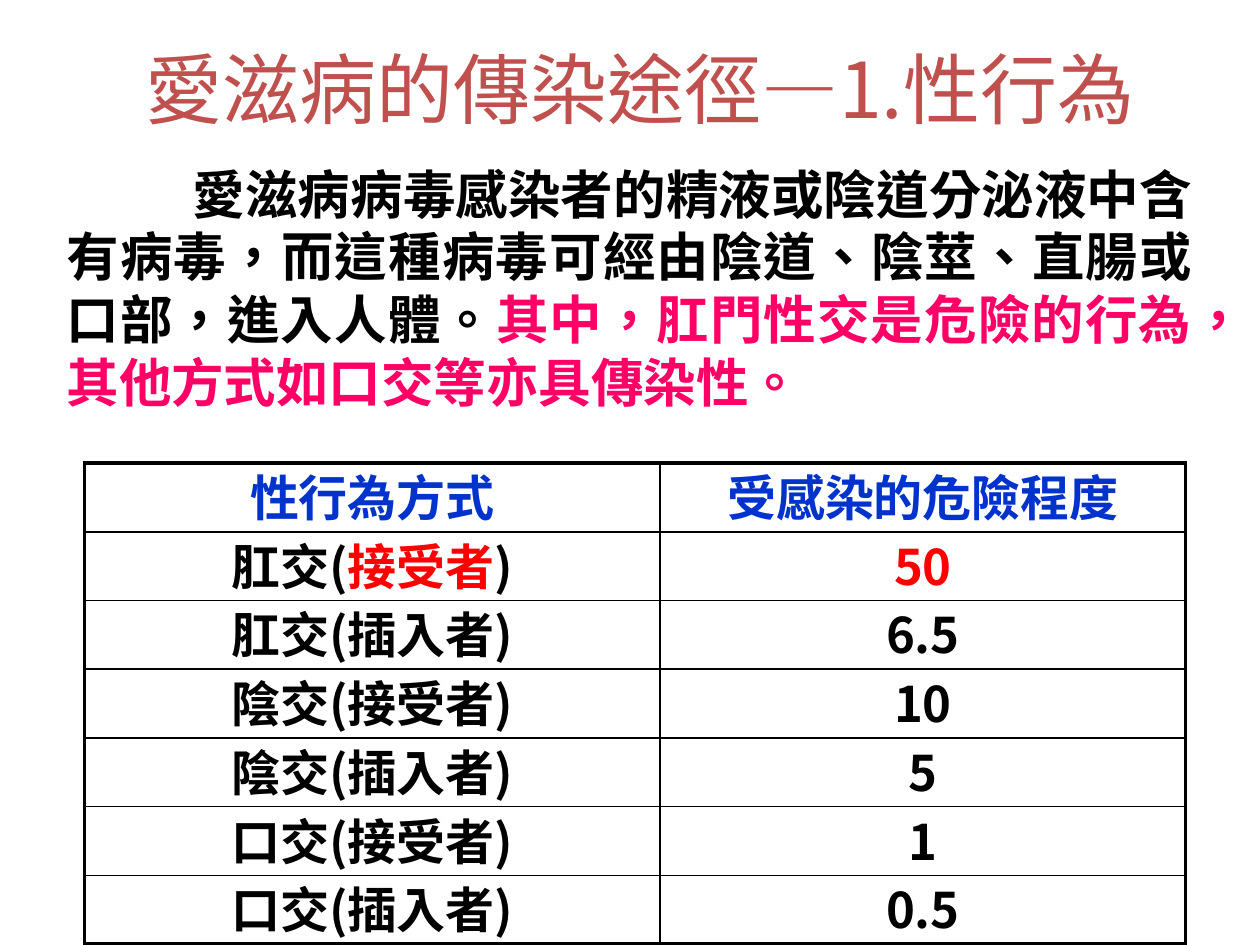
from dataclasses import dataclass

from lxml import etree
from pptx import Presentation
from pptx.dml.color import RGBColor
from pptx.enum.text import MSO_ANCHOR, MSO_AUTO_SIZE, PP_ALIGN
from pptx.oxml.ns import qn
from pptx.util import Inches, Pt

MIDDLE, TOP = MSO_ANCHOR.MIDDLE, MSO_ANCHOR.TOP
CENTER, JUSTIFY = PP_ALIGN.CENTER, PP_ALIGN.JUSTIFY
NO_FIT = MSO_AUTO_SIZE.NONE

WIDTH, HEIGHT = Inches(10), Inches(7.5)
COLORS = {
    "title": "C0504D",
    "text": "000000",
    "warning": "FF0066",
    "header": "0033CC",
    "highest": "FF0000",
}
CJK_FONT = "Noto Sans CJK SC"
TITLE_ONLY_LAYOUT = 5
OUTER_LINE, INNER_LINE = 2.25, 1


@dataclass(frozen=True)
class Style:
    size: float
    font: str
    bold: bool = False


@dataclass(frozen=True)
class Span:
    text: str
    color: str = "text"


@dataclass(frozen=True)
class RiskRow:
    practice: tuple[Span, ...]
    risk: Span


TITLE_STYLE = Style(44, CJK_FONT)
BODY_STYLE = Style(30, "Arial", True)
TABLE_STYLE = Style(28, CJK_FONT, True)

INTRODUCTION = (
    Span("\t愛滋病病毒感染者的精液或陰道分泌液中含有病毒，而這種病毒可經由"
         "陰道、陰莖、直腸或口部，進入人體。"),
    Span("其中，肛門性交是危險的行為，其他方式如口交等亦具傳染性。", "warning"),
)
RISKS = (
    RiskRow((Span("性行為方式", "header"),), Span("受感染的危險程度", "header")),
    RiskRow((Span("肛交("), Span("接受者", "highest"), Span(")")), Span("50", "highest")),
    RiskRow((Span("肛交(插入者)"),), Span("6.5")),
    RiskRow((Span("陰交(接受者)"),), Span("10")),
    RiskRow((Span("陰交(插入者)"),), Span("5")),
    RiskRow((Span("口交(接受者)"),), Span("1")),
    RiskRow((Span("口交(插入者)"),), Span("0.5")),
)


def share(left: float, top: float, width: float, height: float) -> tuple[int, ...]:
    return (int(left * WIDTH), int(top * HEIGHT), int(width * WIDTH), int(height * HEIGHT))


def write(paragraph, spans: tuple[Span, ...], style: Style, alignment) -> None:
    paragraph.alignment = alignment
    for span in spans:
        run = paragraph.add_run()
        run.text = span.text
        run.font.size = Pt(style.size)
        run.font.bold = style.bold
        run.font.name = style.font
        run.font.color.rgb = RGBColor.from_string(COLORS[span.color])
        properties = run._r.get_or_add_rPr()
        properties.set("lang", "zh-TW")
        if style.font == CJK_FONT:
            latin = properties.find(qn("a:latin"))
            east_asian = etree.Element(qn("a:ea"), typeface=style.font)
            latin.addnext(east_asian)


def set_tab_stop(paragraph, position: int) -> None:
    stops = etree.SubElement(paragraph._p.get_or_add_pPr(), qn("a:tabLst"))
    etree.SubElement(stops, qn("a:tab"), pos=str(position), algn="l")


def set_borders(cell, widths: dict[str, float]) -> None:
    properties = cell._tc.get_or_add_tcPr()
    for position, (side, width) in enumerate(widths.items()):
        line = etree.Element(qn(f"a:{side}"), w=str(Pt(width)))
        fill = etree.SubElement(line, qn("a:solidFill"))
        etree.SubElement(fill, qn("a:srgbClr"), val=COLORS["text"])
        properties.insert(position, line)


def add_title(slide) -> None:
    title = slide.shapes.title
    title.left, title.top, title.width, title.height = share(0.067, 0.038, 0.882, 0.11)
    frame = title.text_frame
    frame.auto_size = NO_FIT
    frame.vertical_anchor = MIDDLE
    write(frame.paragraphs[0], (Span("愛滋病的傳染途徑—1.性行為", "title"),),
          TITLE_STYLE, CENTER)


def add_introduction(slide) -> None:
    frame = slide.shapes.add_textbox(*share(0.043, 0.165, 0.914, 0.283)).text_frame
    frame.word_wrap = True
    paragraph = frame.paragraphs[0]
    paragraph.line_spacing = Pt(35.8)
    set_tab_stop(paragraph, Inches(1))
    write(paragraph, INTRODUCTION, BODY_STYLE, JUSTIFY)


def add_risk_table(slide) -> None:
    table = slide.shapes.add_table(
        len(RISKS), 2, *share(0.067, 0.49, 0.874, 0.509)).table
    table.first_row = table.horz_banding = False
    for column, width in zip(table.columns, (0.457, 0.417)):
        column.width = int(width * WIDTH)
    last_row, last_column = len(RISKS) - 1, 1
    for row, risk_row in enumerate(RISKS):
        for column, spans in enumerate((risk_row.practice, (risk_row.risk,))):
            cell = table.cell(row, column)
            cell.fill.background()
            cell.vertical_anchor = TOP
            cell.margin_left = cell.margin_right = Inches(0.04)
            cell.margin_top = cell.margin_bottom = Inches(0.02)
            paragraph = cell.text_frame.paragraphs[0]
            paragraph.line_spacing = 0.9
            write(paragraph, spans, TABLE_STYLE, CENTER)
            on_edge = {
                "lnL": column == 0,
                "lnR": column == last_column,
                "lnT": row == 0,
                "lnB": row == last_row,
            }
            set_borders(cell, {side: OUTER_LINE if outer else INNER_LINE
                               for side, outer in on_edge.items()})


def main() -> None:
    presentation = Presentation()
    presentation.slide_width, presentation.slide_height = WIDTH, HEIGHT
    slide = presentation.slides.add_slide(presentation.slide_layouts[TITLE_ONLY_LAYOUT])
    add_introduction(slide)
    add_title(slide)
    add_risk_table(slide)
    presentation.save("out.pptx")


if __name__ == "__main__":
    main()
